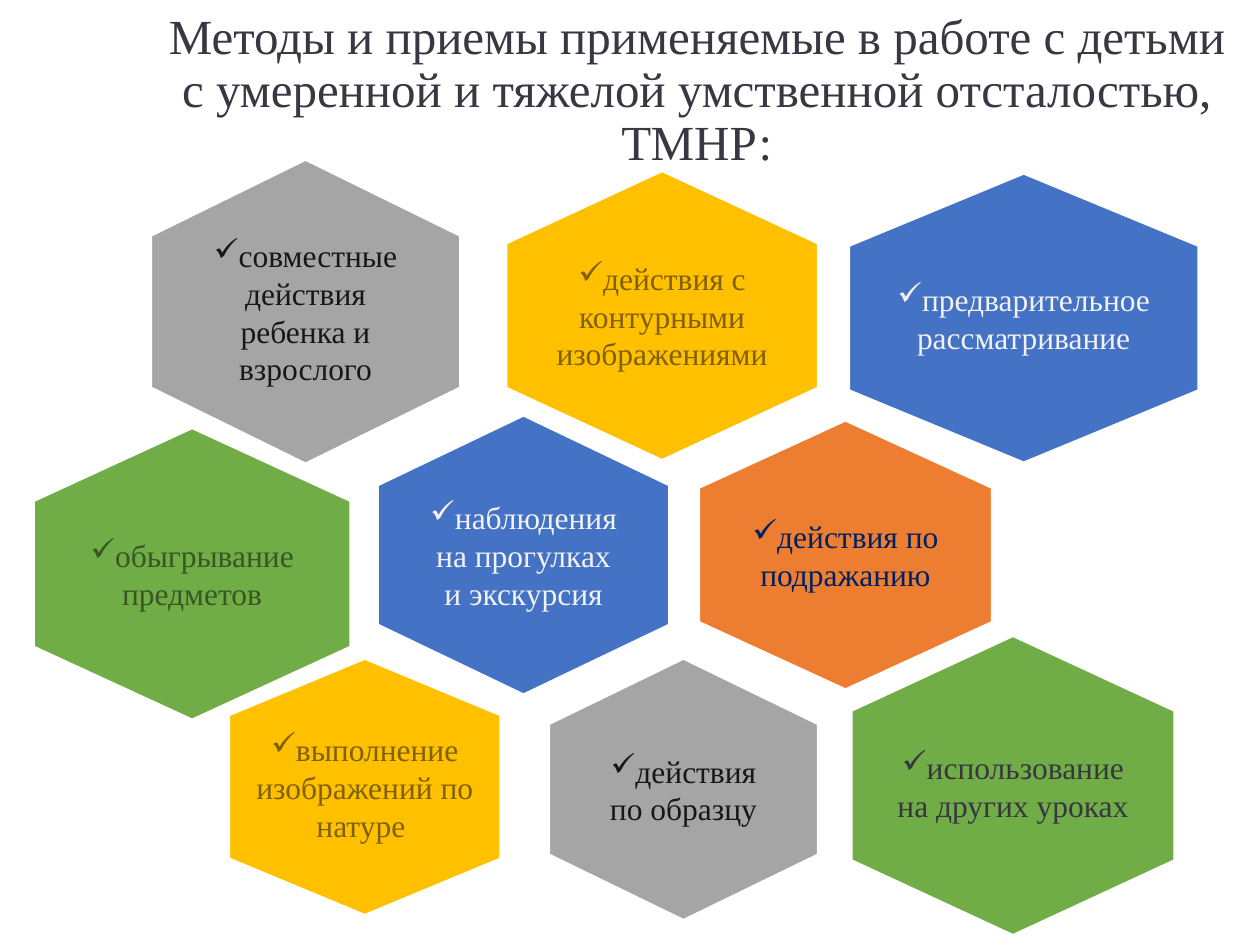
import pptx
import pptx.util
import pptx.dml.color
import pptx.enum.text
import lxml.etree

RGB = pptx.dml.color.RGBColor
ALIGN = pptx.enum.text.PP_ALIGN
ANCHOR = pptx.enum.text.MSO_ANCHOR
NS = "{http://schemas.openxmlformats.org/drawingml/2006/main}"

WIDE, HIGH = pptx.util.Inches(10), pptx.util.Inches(7.5)
FACE = "Times New Roman"

WHITE = RGB(0xFF, 0xFF, 0xFF)
SLATE = RGB(0x39, 0x37, 0x42)
ORANGE = RGB(0xED, 0x7D, 0x31)
GRAY = RGB(0xA5, 0xA5, 0xA5)
GOLD = RGB(0xFF, 0xC0, 0x00)
BLUE = RGB(0x44, 0x72, 0xC4)
GREEN = RGB(0x70, 0xAD, 0x47)
NAVY = RGB(0x00, 0x20, 0x60)
BLACK = RGB(0x18, 0x17, 0x17)
BROWN = RGB(0x80, 0x60, 0x00)
PALE = RGB(0xF2, 0xF2, 0xF2)
DARK = RGB(0x38, 0x36, 0x41)
FOREST = RGB(0x38, 0x57, 0x23)

TITLE = ("Методы и приемы применяемые в работе с детьми "
         "с умеренной и тяжелой умственной отсталостью, ТМНР:")

# Text, box (left, top, width, height), side and top insets, fill, ink.
# All lengths are percent of the slide's width or height.
CELLS = [
    ("действия по подражанию",
     (55.5, 44.53, 23.2, 28.4), (2.8, 2.93), ORANGE, NAVY),
    ("совместные действия ребенка и взрослого",
     (12, 16.93, 24.5, 32.1), (3.9, 3.33), GRAY, BLACK),
    ("действия с контурными изображениями",
     (40.2, 18.13, 24.7, 30.53), (3.4, 3.2), GOLD, BROWN),
    ("предварительное рассматривание",
     (67.4, 18.4, 27.7, 30.53), (3.6, 2.27), BLUE, PALE),
    ("использование на других уроках",
     (67.6, 67.33, 25.6, 31.6), (2.6, 2.8), GREEN, DARK),
    ("действия по образцу",
     (43.6, 69.73, 21.3, 27.6), (3.9, 4.53), GRAY, BLACK),
    ("выполнение изображений по натуре ",
     (18.2, 69.73, 21.5, 27.07), (0.5, 0.8), GOLD, BROWN),
    ("наблюдения на прогулках и экскурсия",
     (30, 44, 23.1, 29.47), (3.7, 2.93), BLUE, PALE),
    ("обыгрывание предметов",
     (2.7, 45.33, 25.1, 30.8), (3.9, 2.4), GREEN, FOREST),
]
SLOPE = 0.25      # share of a hexagon's height above its upright sides
SHALLOW = 0.22    # the same for the hexagon with narrow insets


def across(share):
    return round(WIDE * share / 100)


def down(share):
    return round(HIGH * share / 100)


def apply(item, values):
    for name, value in values.items():
        setattr(item, name, value)


def write(shape, text, size, ink, mark=None, space=1.0):
    frame = shape.text_frame
    apply(frame, {"word_wrap": True, "vertical_anchor": ANCHOR.MIDDLE})
    para = frame.paragraphs[0]
    para.text = text
    if mark:
        props = para._p.get_or_add_pPr()
        apply_xml = {"marL": "0", "indent": "0"}
        for name, value in apply_xml.items():
            props.set(name, value)
        lxml.etree.SubElement(props, NS + "buChar").set("char", mark)
    apply(para, {"alignment": ALIGN.CENTER, "line_spacing": space})
    font = para.runs[0].font
    apply(font, {"name": FACE, "size": pptx.util.Pt(size)})
    font.color.rgb = ink


def head(slide):
    box = slide.shapes.add_textbox(
        across(12.2), 0, across(86.2), down(19.33))
    write(box, TITLE, 28, SLATE, space=0.9)


def hexagon(shapes, text, box, inset, fill, ink):
    left, top, width, height = box
    slope = SHALLOW if inset[0] < 1 else SLOPE
    mid, right, base = left + width / 2, left + width, top + height
    high, low = top + height * slope, base - height * slope
    dots = [(right, high), (right, low), (mid, base), (left, low), (left, high)]
    pen = shapes.build_freeform(across(mid), down(top))
    pen.add_line_segments([(across(x), down(y)) for x, y in dots], close=True)
    shape = pen.convert_to_shape()
    shape.shadow.inherit = False
    shape.fill.solid()
    shape.fill.fore_color.rgb = fill
    shape.line.color.rgb = WHITE
    shape.line.width = pptx.util.Pt(1)
    side, edge = across(inset[0]), down(inset[1])
    apply(shape.text_frame, {"margin_left": side, "margin_right": side,
                             "margin_top": edge, "margin_bottom": edge})
    write(shape, text, 18, ink, mark="✓")


def main():
    deck = pptx.Presentation()
    apply(deck, {"slide_width": WIDE, "slide_height": HIGH})
    slide = deck.slides.add_slide(deck.slide_layouts[6])
    # Title
    head(slide)
    # Honeycomb of methods
    group = slide.shapes.add_group_shape()
    for cell in CELLS:
        hexagon(group.shapes, *cell)
    deck.save("out.pptx")


if __name__ == "__main__":
    main()
